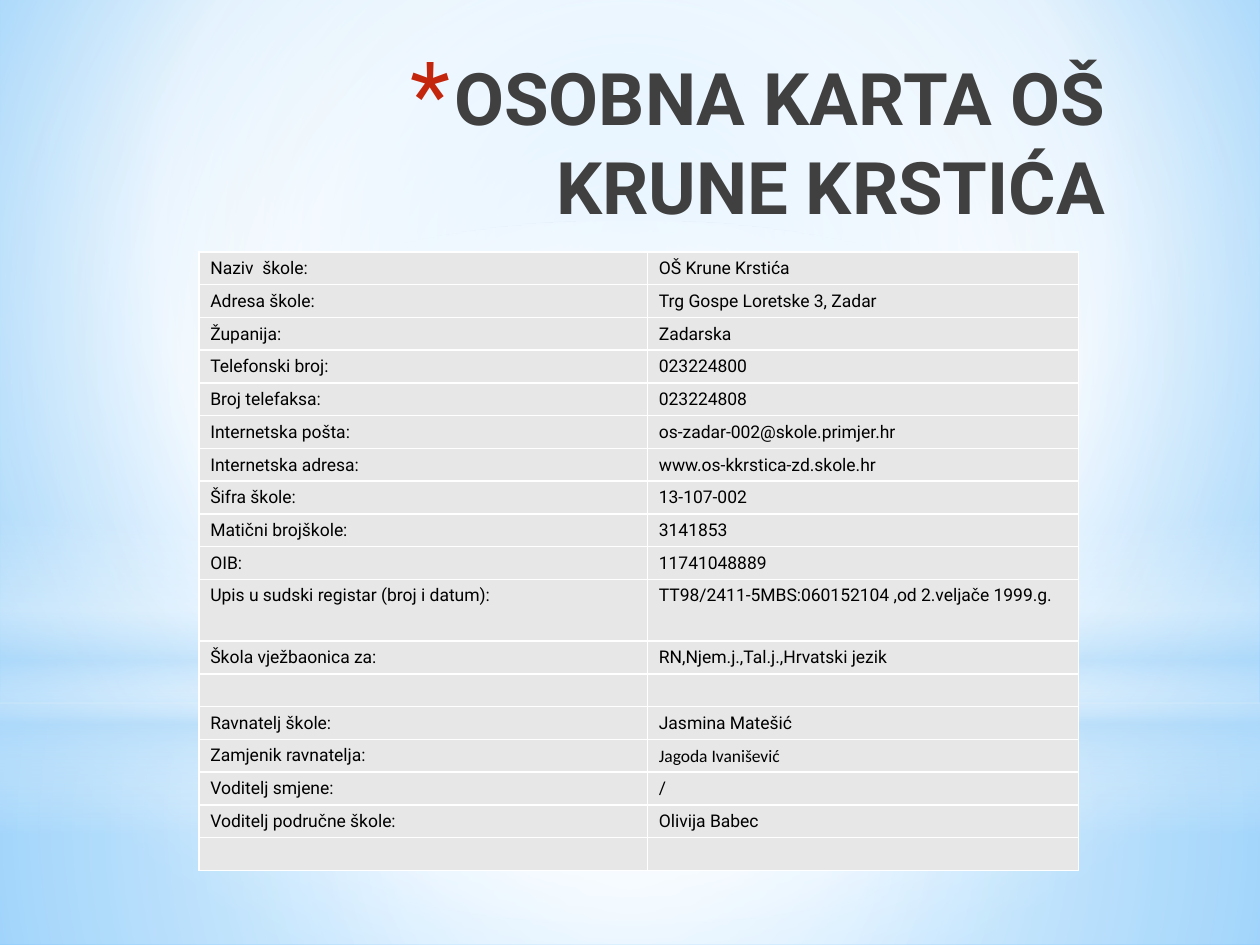
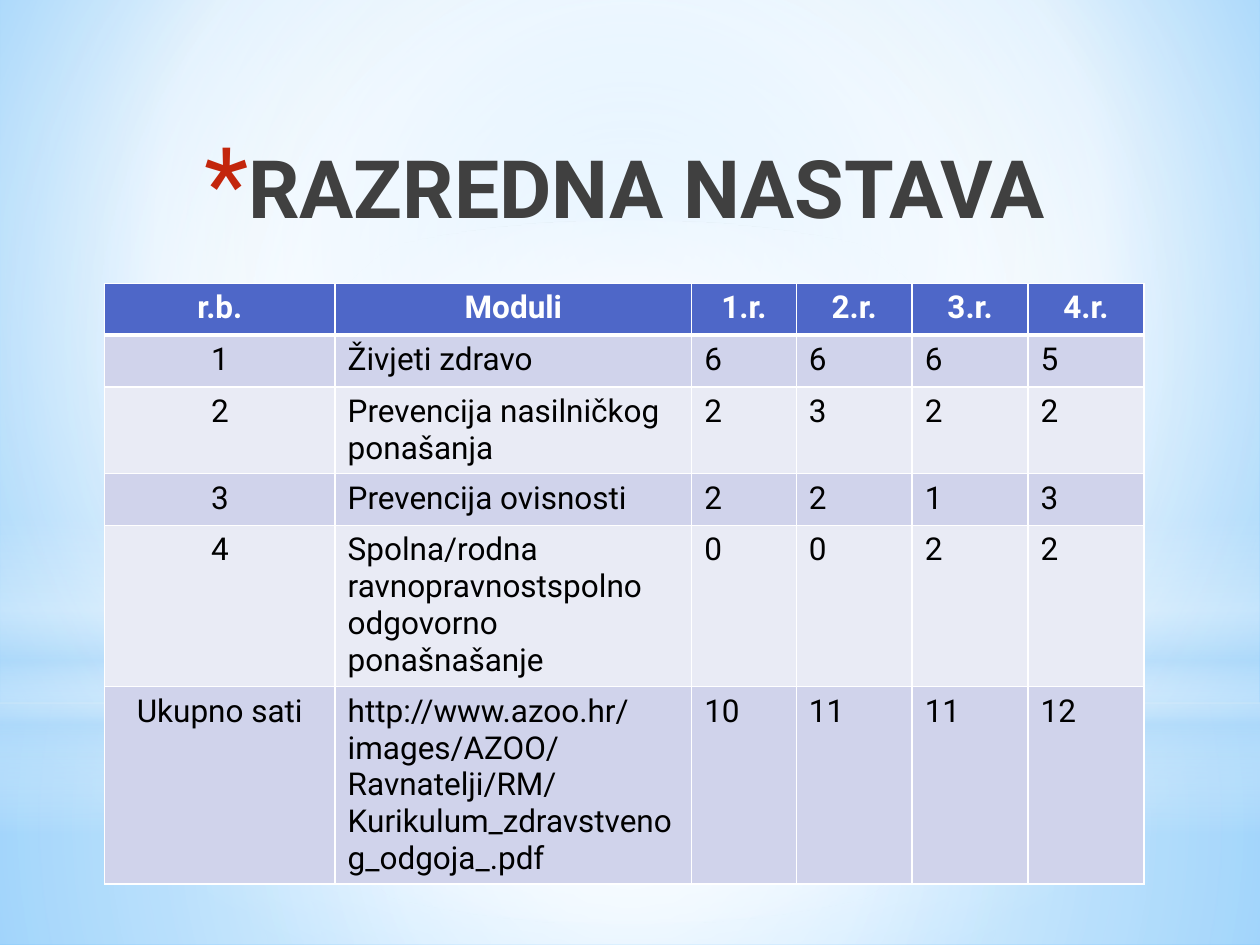
from dataclasses import dataclass
from typing import Optional

from lxml import etree
from pptx import Presentation
from pptx import util as u
from pptx.dml.color import RGBColor
from pptx.enum import shapes, text
from pptx.oxml import ns, parse_xml

COLORS = {
    "white": "FFFFFF", "black": "000000", "title": "404040", "bullet": "C3260C",
    "sky": "9ED5FF", "deep_sky": "5BB9FF", "mist": "B4DCFA",
    "card": "E7E7E7", "header": "4E67C8", "band_dark": "D0D3EB", "band_light": "E9EBF5",
}
FONT = "Roboto"
CENTER = text.PP_ALIGN.CENTER
RECTANGLE = shapes.MSO_SHAPE.RECTANGLE
OVAL = shapes.MSO_SHAPE.OVAL


@dataclass
class Box:
    left: float
    top: float
    width: float
    height: float

    def lengths(self) -> tuple:
        return tuple(u.Inches(side) for side in (self.left, self.top, self.width, self.height))


@dataclass
class Gradient:
    stops: list[tuple[int, str, int]]
    focus: Optional[tuple[int, int, int, int]] = (50, 50, 50, 50)


@dataclass
class Glow:
    kind: shapes.MSO_SHAPE
    box: Box
    gradient: Gradient


@dataclass
class CellStyle:
    fill: str
    size: float
    color: str = "black"
    bold: bool = False
    font: str = FONT
    alignment: Optional[text.PP_ALIGN] = None
    line_spacing: Optional[float] = None
    margins: tuple[float, float] = (0.1, 0.05)
    bottom_border: float = 1


BACKGROUND = Gradient([(0, "sky", 100), (60, "white", 100), (100, "deep_sky", 100)], (20, 10, 20, 60))
GLOWS = [
    Glow(RECTANGLE, Box(0, 5.58, 10, 1.92),
         Gradient([(0, "white", 91), (37, "white", 76), (100, "mist", 79)])),
    Glow(RECTANGLE, Box(0, 0, 10, 5.58),
         Gradient([(0, "white", 89), (48, "white", 62), (100, "mist", 79)])),
    Glow(RECTANGLE, Box(0, 4.12, 10, 2.5),
         Gradient([(0, "white", 0), (29, "white", 30), (45, "mist", 40),
                   (55, "white", 26), (65, "mist", 60), (100, "white", 0)], None)),
    Glow(OVAL, Box(0, 1.75, 10, 5.58),
         Gradient([(0, "white", 100), (56, "white", 0)])),
]

SCHOOL_FACTS = [
    ("Naziv  škole:", "OŠ Krune Krstića"),
    ("Adresa škole:", "Trg Gospe Loretske 3, Zadar"),
    ("Županija:", "Zadarska"),
    ("Telefonski broj:", "023224800"),
    ("Broj telefaksa:", "023224808"),
    ("Internetska pošta:", "os-zadar-002@skole.primjer.hr"),
    ("Internetska adresa:", "www.os-kkrstica-zd.skole.hr"),
    ("Šifra škole:", "13-107-002"),
    ("Matični brojškole:", "3141853"),
    ("OIB:", "11741048889"),
    ("Upis u sudski registar (broj i datum):", "TT98/2411-5MBS:060152104 ,od 2.veljače 1999.g."),
    ("Škola vježbaonica za:", "RN,Njem.j.,Tal.j.,Hrvatski jezik"),
    ("", ""),
    ("Ravnatelj škole:", "Jasmina Matešić"),
    ("Zamjenik ravnatelja:", "Jagoda Ivanišević"),
    ("Voditelj smjene:", "/"),
    ("Voditelj područne škole:", "Olivija Babec"),
    ("", ""),
]
MODULE_HOURS = [
    ("r.b.", "Moduli", "1.r.", "2.r.", "3.r.", "4.r."),
    ("1", "Živjeti zdravo", "6", "6", "6", "5"),
    ("2", "Prevencija nasilničkog ponašanja", "2", "3", "2", "2"),
    ("3", "Prevencija ovisnosti", "2", "2", "1", "3"),
    ("4", "Spolna/rodna ravnopravnostspolno odgovorno ponašnašanje", "0", "0", "2", "2"),
    ("Ukupno sati",
     "http://www.azoo.hr/images/AZOO/Ravnatelji/RM/Kurikulum_zdravstvenog_odgoja_.pdf",
     "10", "11", "11", "12"),
]


def rgb(name: str) -> RGBColor:
    return RGBColor.from_string(COLORS[name])


def apply_gradient(fill, owner, gradient: Gradient) -> None:
    fill.gradient()
    stops = "".join(
        f'<a:gs pos="{position * 1000}"><a:srgbClr val="{COLORS[color]}">'
        f'<a:alpha val="{alpha * 1000}"/></a:srgbClr></a:gs>'
        for position, color, alpha in gradient.stops)
    if gradient.focus:
        sides = " ".join(f'{side}="{value * 1000}"' for side, value in zip("ltrb", gradient.focus))
        direction = f'<a:path path="circle"><a:fillToRect {sides}/></a:path>'
    else:
        direction = '<a:lin ang="5400000" scaled="0"/>'
    default = owner.xpath(".//a:gradFill")[0]
    default.getparent().replace(default, parse_xml(
        f'<a:gradFill {ns.nsdecls("a")} rotWithShape="1"><a:gsLst>{stops}</a:gsLst>{direction}</a:gradFill>'))


def decorate_master(presentation, slide) -> None:
    master = presentation.slide_master
    apply_gradient(master.background.fill, master.element.xpath("p:cSld/p:bg")[0]
                   if master.element.xpath("p:cSld/p:bg/p:bgPr") else master.element, BACKGROUND)
    for index, glow in enumerate(GLOWS):
        shape = slide.shapes.add_shape(glow.kind, *glow.box.lengths())
        shape.shadow.inherit = False
        shape.line.fill.background()
        apply_gradient(shape.fill, shape.element, glow.gradient)
        shape.element.xpath("p:nvSpPr/p:cNvPr")[0].set("id", str(100 + index))
        master.shapes.element.insert(2 + index, shape.element)


def set_title(slide, words: str, box: Box, size: float, alignment: text.PP_ALIGN) -> None:
    title = slide.shapes.title
    title.left, title.top, title.width, title.height = box.lengths()
    frame = title.text_frame
    frame.word_wrap = True
    frame.auto_size = text.MSO_AUTO_SIZE.NONE
    frame.vertical_anchor = text.MSO_ANCHOR.TOP
    frame.margin_top = u.Inches(0.07)
    paragraph = frame.paragraphs[0]
    paragraph.alignment = alignment
    paragraph.line_spacing = 1.03
    run = paragraph.add_run()
    run.text = words
    run.font.name, run.font.size, run.font.bold = FONT, u.Pt(size), True
    run.font.color.rgb = rgb("title")
    properties = paragraph._p.get_or_add_pPr()
    properties.set("marL", str(u.Inches(0.35)))
    properties.set("indent", str(-u.Inches(0.35)))
    bullet_color = etree.SubElement(properties, ns.qn("a:buClr"))
    etree.SubElement(bullet_color, ns.qn("a:srgbClr"), val=COLORS["bullet"])
    etree.SubElement(properties, ns.qn("a:buSzPct"), val="128000")
    etree.SubElement(properties, ns.qn("a:buFont"), typeface=FONT)
    etree.SubElement(properties, ns.qn("a:buChar"), char="*")


def set_borders(cell, bottom: float) -> None:
    properties = cell._tc.get_or_add_tcPr()
    for index, (side, width) in enumerate({"L": 1, "R": 1, "T": 1, "B": bottom}.items()):
        properties.insert(index, parse_xml(
            f'<a:ln{side} {ns.nsdecls("a")} w="{u.Pt(width)}"><a:solidFill>'
            f'<a:srgbClr val="{COLORS["white"]}"/></a:solidFill></a:ln{side}>'))


def fill_cell(cell, words: str, style: CellStyle) -> None:
    cell.fill.solid()
    cell.fill.fore_color.rgb = rgb(style.fill)
    set_borders(cell, style.bottom_border)
    across, down = (u.Inches(margin) for margin in style.margins)
    cell.margin_left = cell.margin_right = across
    cell.margin_top = cell.margin_bottom = down
    paragraph = cell.text_frame.paragraphs[0]
    paragraph.alignment = style.alignment
    paragraph.line_spacing = style.line_spacing
    if not words:
        etree.SubElement(paragraph._p, ns.qn("a:endParaRPr"), sz=str(int(style.size * 100)))
        return
    run = paragraph.add_run()
    run.text = words
    run.font.name, run.font.size, run.font.bold = style.font, u.Pt(style.size), style.bold
    run.font.color.rgb = rgb(style.color)


def add_grid(slide, left: float, top: float, widths: list[float], heights: list[float],
             rows: list[tuple], style_of) -> None:
    box = Box(left, top, sum(widths), sum(heights))
    table = slide.shapes.add_table(len(rows), len(widths), *box.lengths()).table
    table.first_row = table.horz_banding = False
    for column, width in zip(table.columns, widths):
        column.width = u.Inches(width)
    for row, height in zip(table.rows, heights):
        row.height = u.Inches(height)
    for row_index, row_words in enumerate(rows):
        for column_index, words in enumerate(row_words):
            fill_cell(table.cell(row_index, column_index), words, style_of(row_index, column_index))


def school_style(row: int, column: int) -> CellStyle:
    is_deputy = SCHOOL_FACTS[row][column] == "Jagoda Ivanišević"
    return CellStyle("card", 10, font="Calibri" if is_deputy else FONT,
                     line_spacing=1.07, margins=(0.09, 0.04))


def module_style(row: int, column: int) -> CellStyle:
    if row == 0:
        return CellStyle("header", 18, "white", True, alignment=CENTER, bottom_border=3)
    return CellStyle("band_dark" if row % 2 else "band_light", 18,
                     alignment=CENTER if column == 0 else None)


def main() -> None:
    presentation = Presentation()
    presentation.slide_width, presentation.slide_height = u.Inches(10), u.Inches(7.5)
    title_only = presentation.slide_layouts[5]

    school = presentation.slides.add_slide(title_only)
    decorate_master(presentation, school)
    set_title(school, "OSOBNA KARTA OŠ KRUNE KRSTIĆA", Box(1.75, 0.33, 7.12, 1.25),
              41.4, text.PP_ALIGN.RIGHT)
    school_heights = [0.49 if label.startswith("Upis") else 0.26 for label, _ in SCHOOL_FACTS]
    add_grid(school, 1.58, 2, [3.56, 3.42], school_heights, SCHOOL_FACTS, school_style)

    modules = presentation.slides.add_slide(title_only)
    set_title(modules, "RAZREDNA NASTAVA", Box(0.83, 1, 8.25, 1.25), 46, CENTER)
    add_grid(modules, 0.83, 2.25, [1.83, 2.83, 0.83] + [0.92] * 3,
             [0.41, 0.41, 0.69, 0.41, 1.28, 1.56], MODULE_HOURS, module_style)

    presentation.save("out.pptx")


if __name__ == "__main__":
    main()
